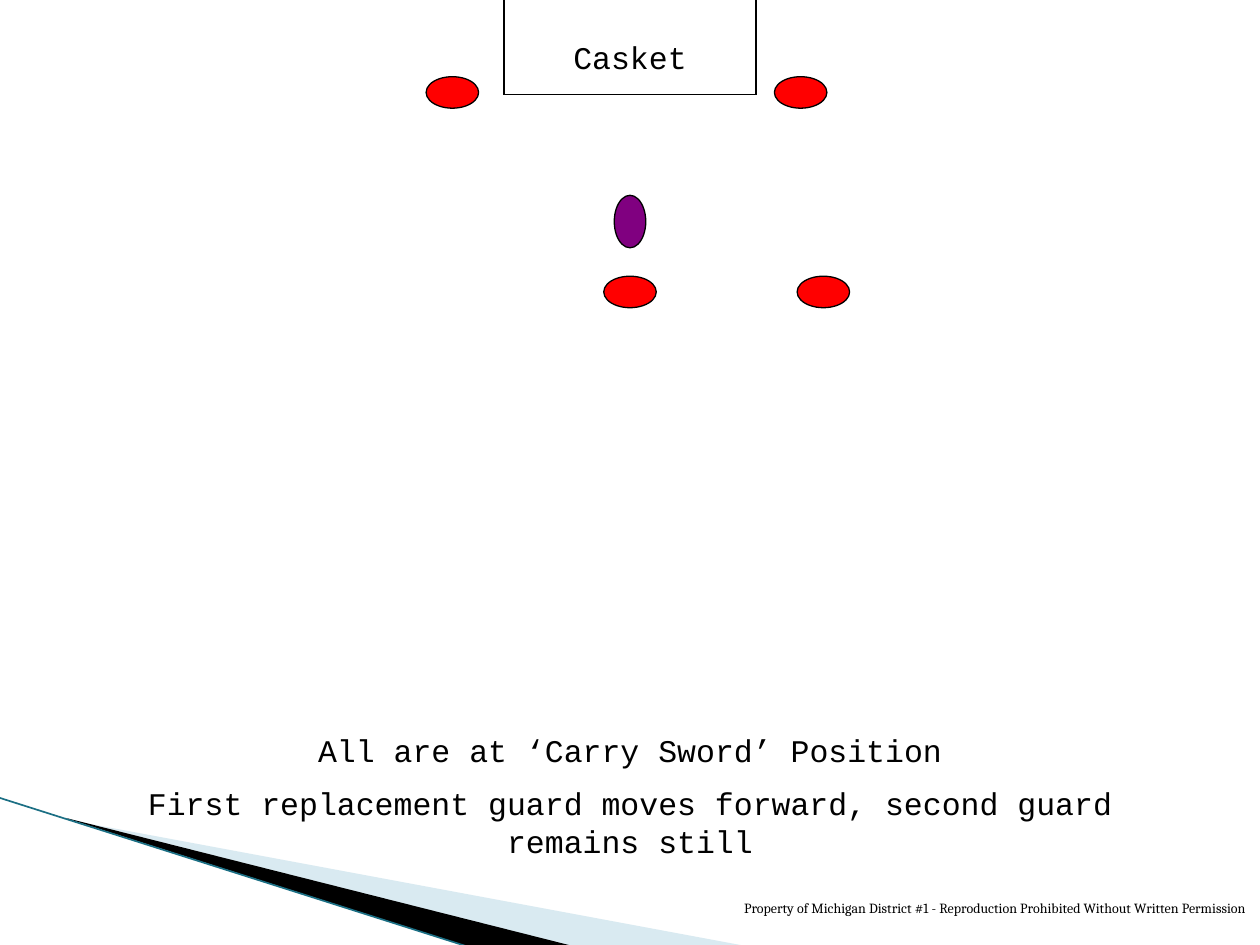
from lxml import etree
from pptx import Presentation
from pptx.dml.color import RGBColor
from pptx.enum.shapes import MSO_CONNECTOR, MSO_SHAPE
from pptx.enum.text import PP_ALIGN
from pptx.oxml.ns import qn
from pptx.util import Pt

STRAIGHT = MSO_CONNECTOR.STRAIGHT
OVAL = MSO_SHAPE.OVAL
CENTER, RIGHT = PP_ALIGN.CENTER, PP_ALIGN.RIGHT

COLORS = {
    "ink": "000000",
    "guard": "FF0000",
    "leader": "800080",
    "pale_wedge": "A0CBDC",
    "wedge_edge": "1B6F84",
}
BLANK_LAYOUT = 6
PERSON_WIDTH, PERSON_HEIGHT = 30, 18


def color(name):
    return RGBColor.from_string(COLORS[name])


def add_line(slide, start, end, line_color="ink", width=0.75):
    line = slide.shapes.add_connector(STRAIGHT, *map(Pt, start + end))
    line.line.color.rgb = color(line_color)
    line.line.width = Pt(width)
    etree.SubElement(line._element.spPr, qn("a:effectLst"))


def add_text(slide, box, paragraphs, size, font, align):
    frame = slide.shapes.add_textbox(*map(Pt, box)).text_frame
    frame.word_wrap = True
    for index, text in enumerate(paragraphs):
        paragraph = frame.add_paragraph() if index else frame.paragraphs[0]
        paragraph.text = text
        paragraph.alignment = align
        if index:
            paragraph.space_before = Pt(size / 2)
        paragraph.font.size = Pt(size)
        paragraph.font.name = font
        paragraph.font.color.rgb = color("ink")


def add_wedge(slide, points, fill, opacity=100):
    corners = [(Pt(x), Pt(y)) for x, y in points]
    builder = slide.shapes.build_freeform(*corners[0])
    builder.add_line_segments(corners[1:], close=True)
    wedge = builder.convert_to_shape()
    wedge.shadow.inherit = False
    wedge.fill.solid()
    wedge.fill.fore_color.rgb = color(fill)
    wedge.line.fill.background()
    if opacity < 100:
        tint = wedge._element.spPr.find(f".//{qn('a:srgbClr')}")
        etree.SubElement(tint, qn("a:alpha"), val=str(opacity * 1000))


def add_corner_decoration(slide, left, top):
    """Draw the two wedges and the edge line from the given corner."""
    def place(*points):
        return [(left + x, top + y) for x, y in points]

    add_wedge(slide, place((40, 12.7), (428.5, 85), (328, 85), (40, 12)),
              "pale_wedge", opacity=40)
    add_wedge(slide, place((38, 11.5), (329, 85), (268, 85), (39, 12)), "ink")
    add_line(slide, *place((0, 0), (267.5, 85)), "wedge_edge", 0.95)


def add_casket(slide, left, top, width, height):
    right, bottom = left + width, top + height
    add_line(slide, (left, bottom), (right, bottom))
    for side in (left, right):
        add_line(slide, (side, bottom), (side, top))
    add_text(slide, (left + 21, top + 18, width - 42, 29), ["Casket"],
             18, "Courier New", CENTER)


def add_person(slide, center_x, center_y, fill, rotation=180):
    person = slide.shapes.add_shape(
        OVAL, Pt(center_x - PERSON_WIDTH / 2), Pt(center_y - PERSON_HEIGHT / 2),
        Pt(PERSON_WIDTH), Pt(PERSON_HEIGHT))
    person.rotation = rotation
    person.shadow.inherit = False
    person.fill.solid()
    person.fill.fore_color.rgb = color(fill)
    person.line.color.rgb = color("ink")
    person.line.width = Pt(0.75)


def add_formation(slide, center_x, top):
    """Place the posted guards, the leader and the replacements by the casket."""
    add_person(slide, center_x, top + 73.8, "leader", rotation=270)
    replacements = [(110.5, 114), (0, 114)]
    posted_guards = [(-101.5, 0), (97.5, 0)]
    for x, y in replacements + posted_guards:
        add_person(slide, center_x + x, top + y, "guard")


def main():
    presentation = Presentation()
    presentation.slide_width, presentation.slide_height = Pt(720), Pt(540)
    slide = presentation.slides.add_slide(
        presentation.slide_layouts[BLANK_LAYOUT])

    add_corner_decoration(slide, 0, 456)
    add_casket(slide, 288, 0, 144, 54)
    add_formation(slide, 360, 52.8)
    add_text(slide, (72, 414, 576, 61),
             ["All are at ‘Carry Sword’ Position",
              "First replacement guard moves forward, second guard remains still"],
             18, "Courier New", CENTER)
    add_text(slide, (312, 510.5, 407.5, 19),
             ["Property of Michigan District #1 - Reproduction Prohibited "
              "Without Written Permission"],
             8, "Cambria", RIGHT)
    presentation.save("out.pptx")


if __name__ == "__main__":
    main()
